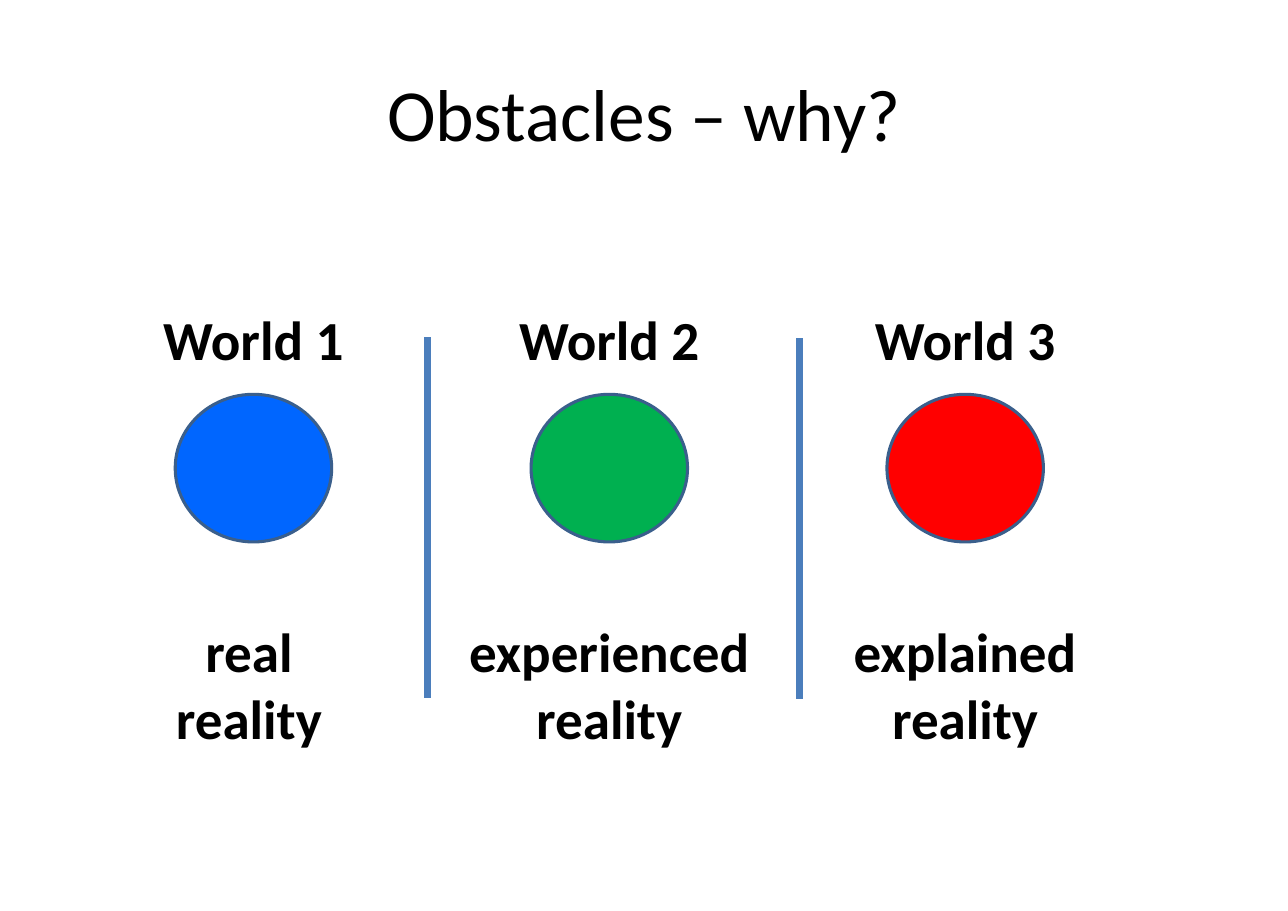
from lxml import etree
from pptx import Presentation
from pptx.dml.color import RGBColor
from pptx.enum import shapes, text
from pptx.oxml import ns
from pptx.util import Inches, Pt

# Content
TITLE = "Obstacles – why?"
WORLDS = [  # heading, circle colour, caption, caption shift
    ("World 1", "0066FF", "real\nreality", -0.04),
    ("World 2", "00B050", "experienced\nreality", 0),
    ("World 3", "FF0000", "explained\nreality", 0),
]

# Layout in inches
FIRST_CENTRE, COLUMN_STEP = 2.3, 3.23
COLUMN_WIDTH = 3.2
CIRCLE_WIDTH, CIRCLE_HEIGHT = 1.42, 1.34
HEADING_TOP, CIRCLE_TOP, CAPTION_TOP = 2.72, 3.58, 5.56
DIVIDERS = [(3.88, 3.06), (7.26, 3.07)]  # x, top
DIVIDER_LENGTH = 3.28

TITLE_FONT = {"name": "Calibri", "size": Pt(48), "bold": False}
LABEL_FONT = {"name": "Calibri", "size": Pt(36), "bold": True}


def colour(value):
    return RGBColor.from_string(value)


def inches(*lengths):
    return [Inches(length) for length in lengths]


def write(frame, words, font):
    """Fill a text frame with one centred black paragraph."""
    frame.word_wrap = True
    para = frame.paragraphs[0]
    para.text = words
    para.alignment = text.PP_ALIGN.CENTER
    for span in para.runs:
        for name, value in font.items():
            setattr(span.font, name, value)
        span.font.color.rgb = colour("000000")


def add_label(page, centre, top, height, words):
    left = centre - COLUMN_WIDTH / 2
    box = page.shapes.add_textbox(*inches(left, top, COLUMN_WIDTH, height))
    write(box.text_frame, words, LABEL_FONT)


def add_circle(page, centre, fill):
    circle = page.shapes.add_shape(
        shapes.MSO_SHAPE.OVAL,
        *inches(centre - CIRCLE_WIDTH / 2, CIRCLE_TOP, CIRCLE_WIDTH, CIRCLE_HEIGHT))
    circle.shadow.inherit = False
    circle.fill.solid()
    circle.fill.fore_color.rgb = colour(fill)
    circle.line.color.rgb = colour("3A5F8C")
    circle.line.width = Pt(2)


def add_divider(page, x, top):
    divider = page.shapes.add_connector(
        shapes.MSO_CONNECTOR.STRAIGHT, *inches(x, top, x, top + DIVIDER_LENGTH))
    divider.line.color.rgb = colour("4B7EBC")
    divider.line.width = Pt(4.5)
    etree.SubElement(divider._element.spPr, ns.qn("a:effectLst"))


def main():
    deck = Presentation()
    deck.slide_width, deck.slide_height = inches(11.69, 8.27)
    page = deck.slides.add_slide(deck.slide_layouts[5])

    # Title
    title = page.shapes.title
    title.left, title.top, title.width, title.height = inches(0.58, 0.33, 10.53, 1.38)
    title.text_frame.vertical_anchor = text.MSO_ANCHOR.MIDDLE
    write(title.text_frame, TITLE, TITLE_FONT)

    # One column per world
    for index, (heading, fill, caption, shift) in enumerate(WORLDS):
        centre = FIRST_CENTRE + index * COLUMN_STEP
        add_circle(page, centre, fill)
        add_label(page, centre, HEADING_TOP, 0.71, heading)
        add_label(page, centre + shift, CAPTION_TOP, 1.31, caption)

    # Lines between the columns
    for x, top in DIVIDERS:
        add_divider(page, x, top)

    deck.save("out.pptx")


if __name__ == "__main__":
    main()
